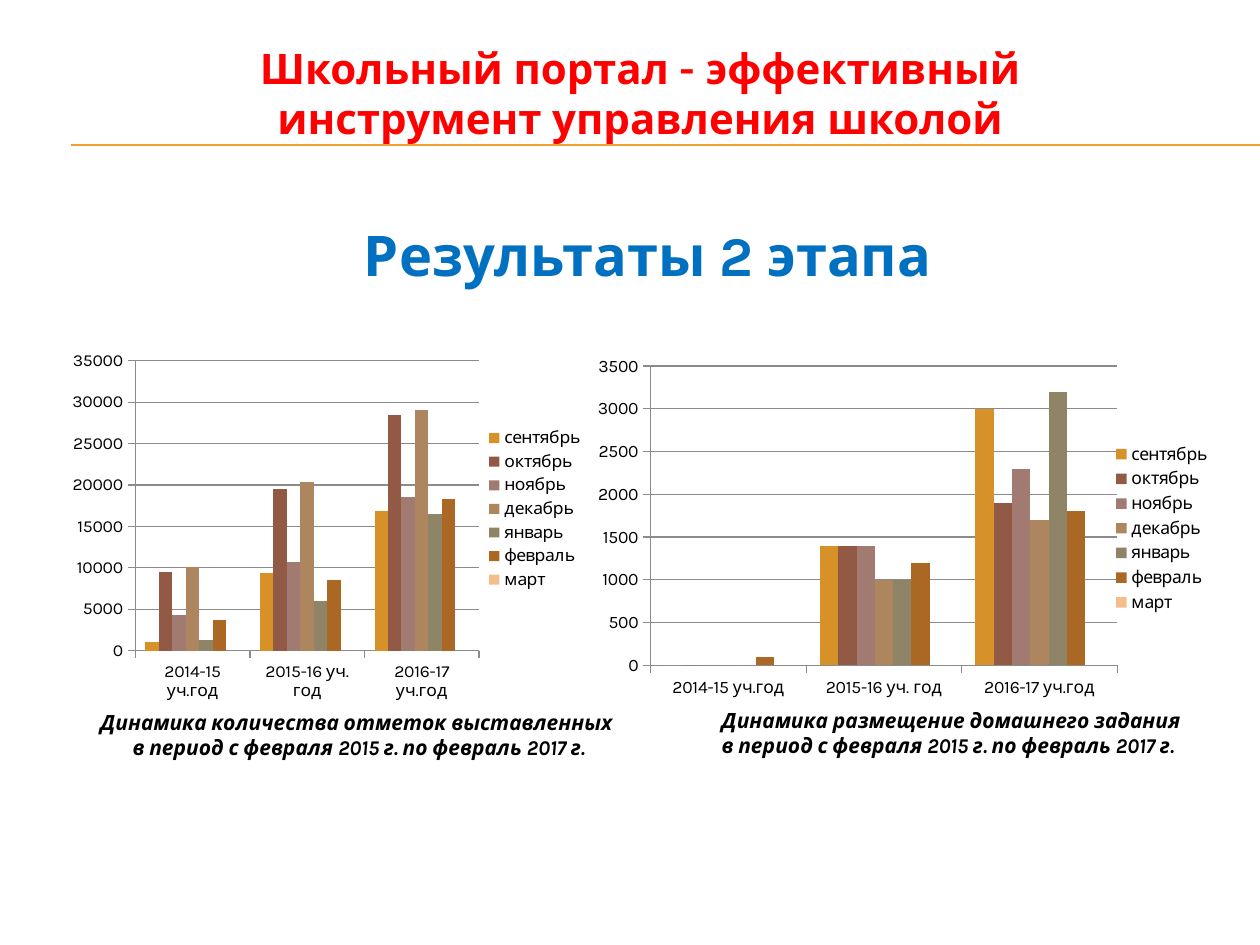
from dataclasses import dataclass

from lxml import etree
from pptx import Presentation
from pptx.chart.data import CategoryChartData
from pptx.dml.color import RGBColor
from pptx.enum.chart import XL_CHART_TYPE, XL_LEGEND_POSITION, XL_TICK_MARK
from pptx.enum.shapes import MSO_CONNECTOR
from pptx.enum.text import MSO_ANCHOR, MSO_AUTO_SIZE, PP_ALIGN
from pptx.oxml.ns import qn
from pptx.util import Cm, Pt

COLUMNS = XL_CHART_TYPE.COLUMN_CLUSTERED
LEGEND_RIGHT = XL_LEGEND_POSITION.RIGHT
TICK_OUT = XL_TICK_MARK.OUTSIDE
STRAIGHT = MSO_CONNECTOR.STRAIGHT
TOP = MSO_ANCHOR.TOP
NO_FIT = MSO_AUTO_SIZE.NONE
LEFT, CENTER = PP_ALIGN.LEFT, PP_ALIGN.CENTER


@dataclass(frozen=True)
class Theme:
    font: str = "Karla"
    title: str = "FF0000"
    heading: str = "0070C0"
    text: str = "000000"
    rule: str = "F0A22E"
    grid: str = "8B8B8B"
    months: tuple = ("D69129", "925944", "A17B71", "AD8660",
                     "8F8466", "AB6724", "F4BE8B")
    title_size: int = 24
    heading_size: int = 32
    caption_size: int = 12
    chart_size: int = 10


@dataclass(frozen=True)
class Box:
    left: float
    top: float
    width: float
    height: float

    def lengths(self) -> tuple:
        return tuple(map(Cm, (self.left, self.top, self.width, self.height)))


@dataclass(frozen=True)
class MonthlyChart:
    box: Box
    plot: tuple  # x, y, w, h as shares of the chart
    values: tuple  # one row per month, one value per school year


@dataclass(frozen=True)
class Caption:
    box: Box
    subject: str
    align: int


THEME = Theme()
YEARS = ("2014-15 уч.год", "2015-16 уч. год", "2016-17 уч.год")
MONTHS = ("сентябрь", "октябрь", "ноябрь", "декабрь", "январь", "февраль  ", "март")
PERIOD = "в период с февраля 2015 г. по февраль 2017 г."
NO_DATA = (None, None, None)

MARKS = MonthlyChart(
    Box(1.09, 6.73, 11, 7.39), (0.149, 0.077, 0.63, 0.828),
    ((1100, 9400, 16900), (9500, 19500, 28400), (4300, 10700, 18500),
     (10100, 20400, 29100), (1300, 6000, 16500), (3700, 8500, 18300), NO_DATA))
HOMEWORK = MonthlyChart(
    Box(11.9, 7.13, 12.83, 7.04), (0.095, 0.036, 0.733, 0.857),
    ((0, 1400, 3000), (0, 1400, 1900), (0, 1400, 2300),
     (0, 1000, 1700), (0, 1000, 3200), (100, 1200, 1800), NO_DATA))
CAPTIONS = (
    Caption(Box(14.3, 14.13, 10.9, 1.27), "Динамика размещение домашнего задания", LEFT),
    Caption(Box(0.89, 14.17, 12.7, 1.27), "Динамика количества отметок выставленных ", CENTER),
)


def place(shape, box: Box) -> None:
    names = ("left", "top", "width", "height")
    for name, length in zip(names, box.lengths()):
        setattr(shape, name, length)


def style_font(font, size: int, color: str, **extra) -> None:
    values = {"name": THEME.font, "size": Pt(size), "bold": False, **extra}
    for name, value in values.items():
        setattr(font, name, value)
    font.color.rgb = RGBColor.from_string(color)


def write_lines(frame, lines: tuple, align, size: int, color: str, **extra) -> None:
    settings = {"word_wrap": True, "auto_size": NO_FIT, "vertical_anchor": TOP}
    for name, value in settings.items():
        setattr(frame, name, value)
    for index, line in enumerate(lines):
        paragraph = frame.paragraphs[0] if index == 0 else frame.add_paragraph()
        paragraph.alignment = align
        run = paragraph.add_run()
        run.text = line
        style_font(run.font, size, color, bold=True, **extra)


def add_rule(slide, y: float) -> None:
    rule = slide.shapes.add_connector(STRAIGHT, Cm(1.43), Cm(y), Cm(25.4), Cm(y))
    rule.line.width = Pt(0.75)
    rule.line.color.rgb = RGBColor.from_string(THEME.rule)
    etree.SubElement(rule._element.spPr, qn("a:effectLst"))


def fix_plot_area(chart, shares: tuple) -> None:
    """Set the inner plot area by hand; python-pptx has no method for it."""
    plot_area = chart._chartSpace.chart.plotArea
    for old in plot_area.findall(qn("c:layout")):
        plot_area.remove(old)
    layout = etree.Element(qn("c:layout"))
    plot_area.insert(0, layout)
    manual = etree.SubElement(layout, qn("c:manualLayout"))
    settings = [("layoutTarget", "inner"), ("xMode", "edge"), ("yMode", "edge")]
    settings += zip("xywh", map(str, shares))
    for tag, value in settings:
        etree.SubElement(manual, qn(f"c:{tag}")).set("val", value)


def add_monthly_chart(slide, spec: MonthlyChart) -> None:
    data = CategoryChartData()
    data.categories = YEARS
    for month, values in zip(MONTHS, spec.values):
        data.add_series(month, values)
    chart = slide.shapes.add_chart(COLUMNS, *spec.box.lengths(), data).chart
    chart.has_title = False
    style_font(chart.font, THEME.chart_size, THEME.text)

    # Columns
    plot = chart.plots[0]
    for name, value in {"gap_width": 150, "overlap": 0, "vary_by_categories": False}.items():
        setattr(plot, name, value)
    for series, color in zip(plot.series, THEME.months):
        series.format.fill.solid()
        series.format.fill.fore_color.rgb = RGBColor.from_string(color)

    # Axes, gridlines and legend
    grid_color = RGBColor.from_string(THEME.grid)
    chart.value_axis.has_major_gridlines = True
    lines = [chart.value_axis.major_gridlines.format.line]
    for axis in (chart.category_axis, chart.value_axis):
        axis.major_tick_mark = TICK_OUT
        lines.append(axis.format.line)
    for line in lines:
        line.color.rgb = grid_color
        line.width = Pt(0.75)
    chart.has_legend = True
    chart.legend.position = LEGEND_RIGHT
    chart.legend.include_in_layout = False
    fix_plot_area(chart, spec.plot)


def add_caption(slide, caption: Caption) -> None:
    box = slide.shapes.add_textbox(*caption.box.lengths())
    write_lines(box.text_frame, (caption.subject, PERIOD), caption.align,
                THEME.caption_size, THEME.text, italic=True)


def main() -> None:
    presentation = Presentation()
    presentation.slide_width, presentation.slide_height = Cm(25.4), Cm(19.05)
    slide = presentation.slides.add_slide(presentation.slide_layouts[1])

    # Double rule under the title
    for y in (2.92, 2.94):
        add_rule(slide, y)

    # Title and heading
    title, heading = slide.shapes.title, slide.placeholders[1]
    place(title, Box(3.1, 0.72, 19.61, 2.31))
    write_lines(title.text_frame, ("Школьный портал - эффективный инструмент управления школой",),
                CENTER, THEME.title_size, THEME.title)
    place(heading, Box(0.85, 4.32, 24.13, 12.57))
    write_lines(heading.text_frame, (" Результаты 2 этапа",),
                CENTER, THEME.heading_size, THEME.heading)
    properties = heading.text_frame.paragraphs[0]._p.get_or_add_pPr()
    properties.set("marL", "0")
    properties.set("indent", "0")
    etree.SubElement(properties, qn("a:buNone"))

    # Charts with their captions
    for spec in (MARKS, HOMEWORK):
        add_monthly_chart(slide, spec)
    for caption in CAPTIONS:
        add_caption(slide, caption)

    presentation.save("out.pptx")


if __name__ == "__main__":
    main()
